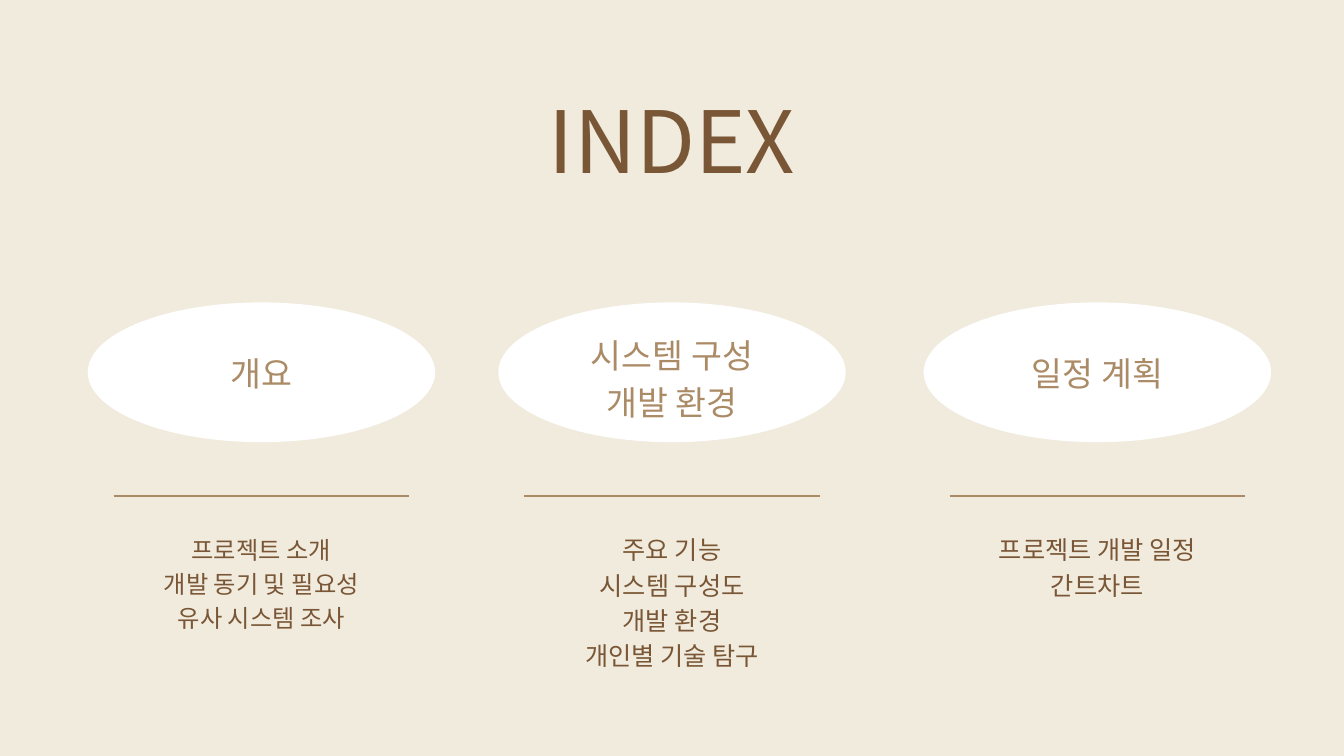
import dataclasses

import pptx
import pptx.dml.color
import pptx.enum.shapes
import pptx.enum.text
import pptx.oxml.ns
import pptx.util
from lxml import etree

Inches = pptx.util.Inches
Pt = pptx.util.Pt


@dataclasses.dataclass(frozen=True)
class Theme:
    background: str = "F1EBDE"
    panel: str = "FFFFFF"
    accent: str = "AB8A66"
    dark: str = "795635"
    title_font: str = "Noto Sans CJK KR"
    text_font: str = "Calibri"
    title_size: int = 92
    heading_size: int = 36
    leading: float = 1.4
    rule_width: float = 1.5


@dataclasses.dataclass(frozen=True)
class Section:
    center: float
    heading: tuple
    heading_top: float
    topics: tuple
    topics_top: float
    topic_size: int


SECTIONS = (
    Section(3.89, ("개요",), 5.15,
            ("프로젝트 소개", "개발 동기 및 필요성", "유사 시스템 조사"), 7.89, 26),
    Section(10, ("시스템 구성", "개발 환경"), 4.89,
            ("주요 기능", "시스템 구성도", "개발 환경", "개인별 기술 탐구"), 7.88, 27),
    Section(16.33, ("일정 계획",), 5.15,
            ("프로젝트 개발 일정", "간트차트"), 7.88, 27),
)


def rgb(value):
    return pptx.dml.color.RGBColor.from_string(value)


class SlideBuilder:
    def __init__(self, slide, theme):
        self.slide = slide
        self.theme = theme
        slide.background.fill.solid()
        slide.background.fill.fore_color.rgb = rgb(theme.background)

    def set_lines(self, holder, center, top, width, lines, size, color, font):
        """Place a text holder around a centre line and fill it with plain centred lines."""
        leading = size * self.theme.leading
        holder.left, holder.top = Inches(center - width / 2), Inches(top)
        holder.width, holder.height = Inches(width), Pt(leading * len(lines))
        frame = holder.text_frame
        frame.word_wrap = True
        frame.auto_size = pptx.enum.text.MSO_AUTO_SIZE.NONE
        frame.vertical_anchor = pptx.enum.text.MSO_ANCHOR.TOP
        frame.margin_left = frame.margin_right = 0
        frame.margin_top = frame.margin_bottom = 0
        for index, line in enumerate(lines):
            paragraph = frame.add_paragraph() if index else frame.paragraphs[0]
            paragraph.alignment = pptx.enum.text.PP_ALIGN.CENTER
            paragraph.line_spacing = Pt(leading)
            paragraph.space_before = paragraph.space_after = Pt(0)
            properties = paragraph._p.get_or_add_pPr()
            properties.set("marL", "0")
            properties.set("indent", "0")
            etree.SubElement(properties, pptx.oxml.ns.qn("a:buNone"))
            run = paragraph.add_run()
            run.text = line
            run.font.name = font
            run.font.size = Pt(size)
            run.font.bold = False
            run.font.color.rgb = rgb(color)

    def title(self, text):
        self.set_lines(self.slide.shapes.title, 10, 1.05, 5.62, (text,),
                       self.theme.title_size, self.theme.dark, self.theme.title_font)

    def oval(self, center):
        width, height = 5.17, 2.08
        oval = self.slide.shapes.add_shape(
            pptx.enum.shapes.MSO_SHAPE.OVAL,
            Inches(center - width / 2), Inches(4.5), Inches(width), Inches(height))
        oval.shadow.inherit = False
        oval.fill.solid()
        oval.fill.fore_color.rgb = rgb(self.theme.panel)
        oval.line.fill.background()

    def rule(self, center):
        half, y = 2.2, Inches(7.38)
        rule = self.slide.shapes.add_connector(
            pptx.enum.shapes.MSO_CONNECTOR.STRAIGHT,
            Inches(center - half), y, Inches(center + half), y)
        rule.line.color.rgb = rgb(self.theme.accent)
        rule.line.width = Pt(self.theme.rule_width)
        etree.SubElement(rule._element.spPr, pptx.oxml.ns.qn("a:effectLst"))

    def heading(self, section):
        box = self.slide.shapes.add_textbox(0, 0, 0, 0)
        self.set_lines(box, section.center, section.heading_top, 3.84, section.heading,
                       self.theme.heading_size, self.theme.accent, self.theme.text_font)

    def topics(self, section, placeholder):
        self.set_lines(placeholder, section.center, section.topics_top, 4.4, section.topics,
                       section.topic_size, self.theme.dark, self.theme.text_font)


def main():
    presentation = pptx.Presentation()
    presentation.slide_width = Inches(20)
    presentation.slide_height = Inches(11.25)
    comparison_layout = presentation.slide_layouts[4]
    slide = presentation.slides.add_slide(comparison_layout)
    builder = SlideBuilder(slide, Theme())

    builder.title("INDEX")
    _, *bodies = slide.placeholders
    for section, body in zip(SECTIONS, bodies):
        builder.oval(section.center)
        builder.rule(section.center)
        builder.heading(section)
        builder.topics(section, body)
    for unused in bodies[len(SECTIONS):]:
        unused._element.getparent().remove(unused._element)

    presentation.save("out.pptx")


if __name__ == "__main__":
    main()
